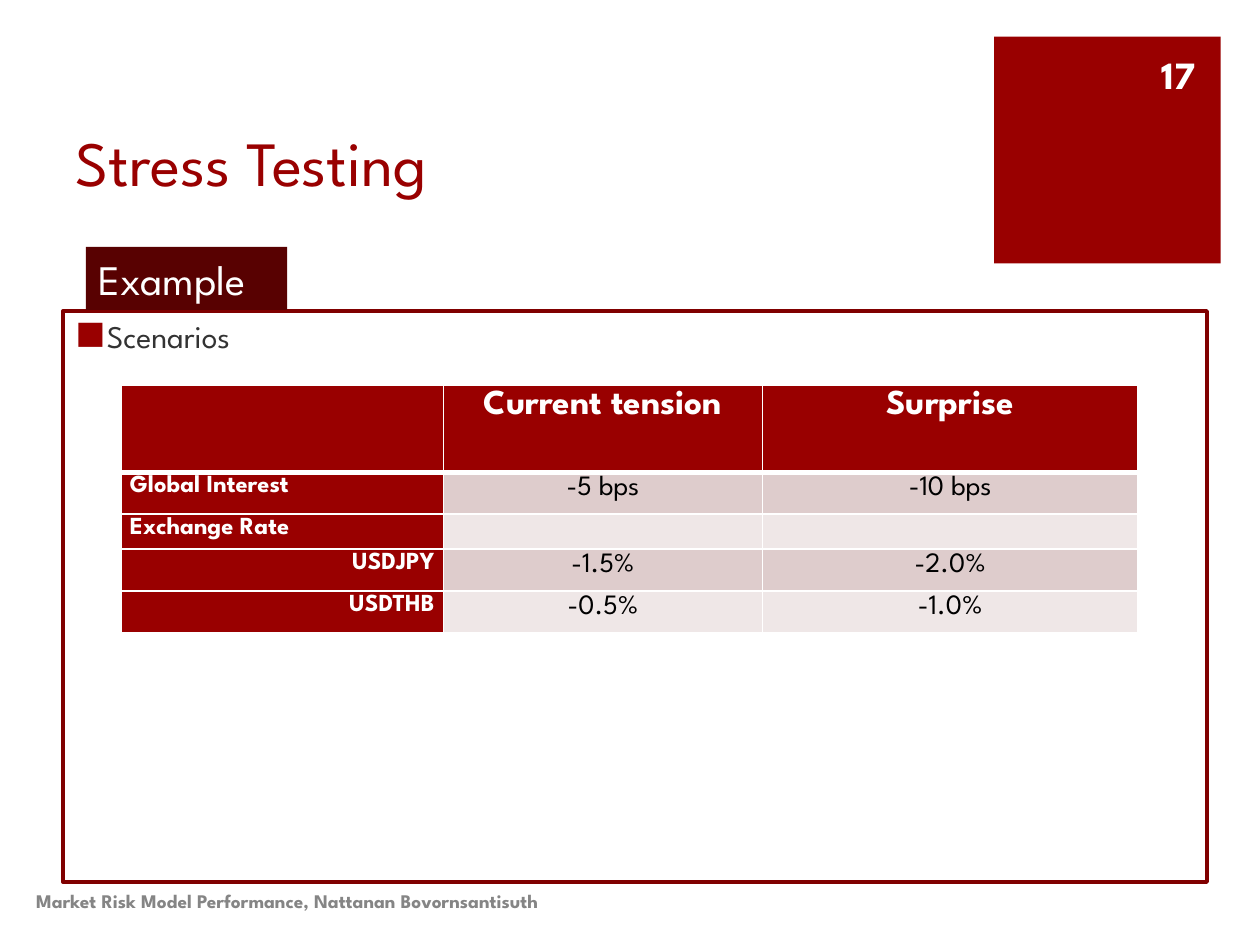
from dataclasses import dataclass

import pptx
import pptx.dml.color
import pptx.enum.shapes
import pptx.enum.text
import pptx.oxml.ns
import pptx.util
from lxml import etree

Cm = pptx.util.Cm
Pt = pptx.util.Pt
RGB = pptx.dml.color.RGBColor.from_string
ALIGN = pptx.enum.text.PP_ALIGN
ANCHOR = pptx.enum.text.MSO_ANCHOR
qn = pptx.oxml.ns.qn


@dataclass(frozen=True)
class Theme:
    font: str = "League Spartan"
    red: str = "990000"
    frame: str = "800000"
    tab: str = "580101"
    band_dark: str = "DECCCC"
    band_light: str = "EFE7E7"
    white: str = "FFFFFF"
    black: str = "000000"
    body: str = "333333"
    grey: str = "858585"
    title_pt: int = 36
    tab_pt: int = 24
    number_pt: int = 22
    header_pt: int = 20
    body_pt: int = 18
    value_pt: int = 16
    label_pt: int = 14
    footer_pt: int = 11


@dataclass(frozen=True)
class Box:
    left: float
    top: float
    width: float
    height: float

    def lengths(self) -> tuple:
        return Cm(self.left), Cm(self.top), Cm(self.width), Cm(self.height)


@dataclass(frozen=True)
class Style:
    size: int
    color: str
    bold: bool = False
    align: ALIGN = ALIGN.LEFT


@dataclass(frozen=True)
class Row:
    height: float
    label: str
    values: tuple
    label_align: ALIGN = ALIGN.LEFT


T = Theme()
COLUMN_WIDTHS = (6.5, 6.43, 7.57)
ROWS = (
    Row(1.75, "", ("Current tension", "Surprise")),
    Row(0.84, "Global Interest", ("-5 bps", "-10 bps")),
    Row(0.71, "Exchange Rate", ("", "")),
    Row(0.84, "USDJPY", ("-1.5%", "-2.0%"), ALIGN.RIGHT),
    Row(0.84, "USDTHB", ("-0.5%", "-1.0%"), ALIGN.RIGHT),
)


def write(tf, text: str, style: Style):
    """Set one formatted paragraph and return it."""
    tf.text = text
    p = tf.paragraphs[0]
    p.alignment = style.align
    for r in p.runs:
        r.font.name = T.font
        r.font.size = Pt(style.size)
        r.font.bold = style.bold
        r.font.color.rgb = RGB(style.color)
    return p


def place(sp, box: Box) -> None:
    sp.left, sp.top, sp.width, sp.height = box.lengths()


def add_block(s, box: Box, color: str):
    sp = s.shapes.add_shape(pptx.enum.shapes.MSO_SHAPE.RECTANGLE, *box.lengths())
    sp.shadow.inherit = False
    sp.fill.solid()
    sp.fill.fore_color.rgb = RGB(color)
    sp.line.fill.background()
    return sp


def add_label(s, box: Box, text: str, style: Style) -> None:
    tf = s.shapes.add_textbox(*box.lengths()).text_frame
    tf.word_wrap = True
    tf.vertical_anchor = ANCHOR.MIDDLE
    write(tf, text, style)


def set_bullet(p, char: str, color: str, indent: float) -> None:
    pPr = p._p.get_or_add_pPr()
    pPr.set("marL", str(Cm(indent)))
    pPr.set("indent", str(-Cm(indent)))
    clr = etree.SubElement(pPr, qn("a:buClr"))
    etree.SubElement(clr, qn("a:srgbClr"), val=color)
    etree.SubElement(pPr, qn("a:buFont"), typeface=T.font)
    etree.SubElement(pPr, qn("a:buChar"), char=char)


def set_borders(cell, widths: dict) -> None:
    """Give a cell white borders; widths are points by side, in schema order."""
    tcPr = cell._tc.get_or_add_tcPr()
    for i, (side, width) in enumerate(widths.items()):
        ln = etree.Element(qn(f"a:ln{side}"), w=str(Pt(width)))
        fill = etree.SubElement(ln, qn("a:solidFill"))
        etree.SubElement(fill, qn("a:srgbClr"), val=T.white)
        tcPr.insert(i, ln)


def fill_cell(cell, text: str, style: Style, fill: str, borders: dict) -> None:
    cell.margin_left = cell.margin_right = Cm(0.18)
    cell.margin_top = cell.margin_bottom = 0
    cell.fill.solid()
    cell.fill.fore_color.rgb = RGB(fill)
    p = write(cell.text_frame, text, style)
    p.line_spacing = 1.15
    if not text:  # keeps an empty cell from stretching its row
        etree.SubElement(p._p, qn("a:endParaRPr"), sz=str(style.size * 100))
    set_borders(cell, borders)


def add_scenario_table(s, left: float, top: float) -> None:
    box = Box(left, top, sum(COLUMN_WIDTHS), sum(row.height for row in ROWS))
    table = s.shapes.add_table(len(ROWS), len(COLUMN_WIDTHS), *box.lengths()).table
    for column, width in zip(table.columns, COLUMN_WIDTHS):
        column.width = Cm(width)
    header = Style(T.header_pt, T.white, True, ALIGN.CENTER)
    value = Style(T.value_pt, T.black, False, ALIGN.CENTER)
    for i, row in enumerate(ROWS):
        table.rows[i].height = Cm(row.height)
        borders = {"L": 1, "R": 1, "T": 3 if i == 1 else 1, "B": 3 if i == 0 else 1}
        band = T.band_dark if i % 2 else T.band_light
        label = Style(T.label_pt, T.white, True, row.label_align)
        fill_cell(table.cell(i, 0), row.label, label, T.red, borders)
        for j, text in enumerate(row.values, start=1):
            style, fill = (value, band) if i else (header, T.red)
            fill_cell(table.cell(i, j), text, style, fill, borders)


def main() -> None:
    prs = pptx.Presentation()
    prs.slide_width, prs.slide_height = Cm(25.4), Cm(19.05)
    s = prs.slides.add_slide(prs.slide_layouts[1])

    # Title
    title = s.shapes.title
    place(title, Box(1.27, 0.97, 18.08, 3.18))
    title.text_frame.vertical_anchor = ANCHOR.BOTTOM
    write(title.text_frame, "Stress Testing", Style(T.title_pt, T.red))

    # Framed body
    body = s.placeholders[1]
    place(body, Box(1.27, 6.27, 23.06, 11.51))
    body.line.color.rgb = RGB(T.frame)
    body.line.width = Pt(2.25)
    p = write(body.text_frame, "Scenarios", Style(T.body_pt, T.body))
    set_bullet(p, "■", T.red, 0.63)

    # Page number on its square, and footer
    add_block(s, Box(20.04, 0.74, 4.57, 4.57), T.red)
    add_label(s, Box(22.94, 0.99, 1.4, 1.02), "17",
              Style(T.number_pt, T.white, True, ALIGN.RIGHT))
    add_label(s, Box(0.48, 17.65, 16.69, 1.02),
              "Market Risk Model Performance, Nattanan Bovornsantisuth",
              Style(T.footer_pt, T.grey, True))

    # Tab above the frame
    tab = add_block(s, Box(1.73, 4.98, 4.06, 1.27), T.tab)
    tab.text_frame.vertical_anchor = ANCHOR.MIDDLE
    write(tab.text_frame, "Example", Style(T.tab_pt, T.white))

    add_scenario_table(s, 2.44, 7.77)
    prs.save("out.pptx")


if __name__ == "__main__":
    main()
